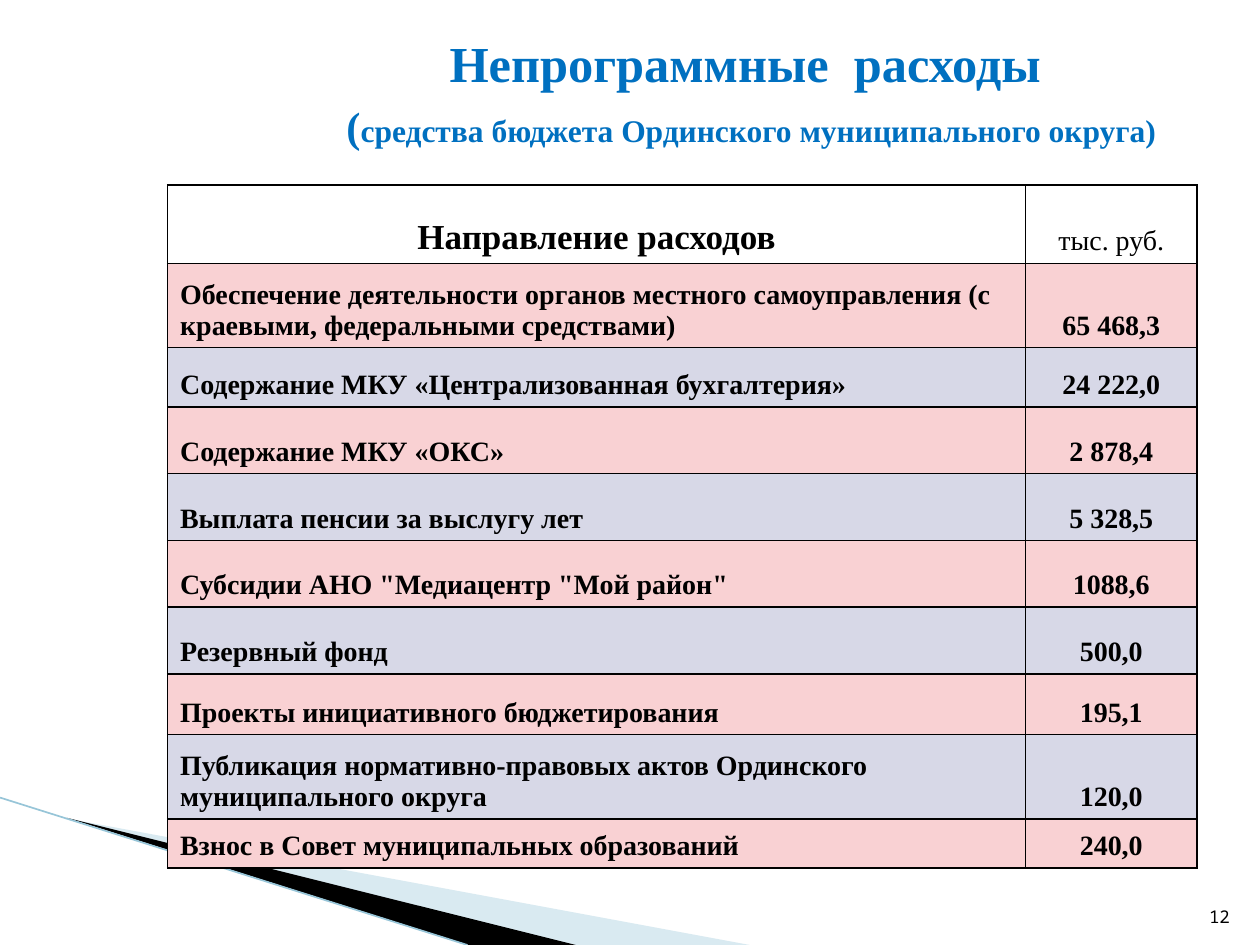
from lxml import etree
from pptx import Presentation
from pptx.dml.color import RGBColor
from pptx.enum.shapes import MSO_CONNECTOR
from pptx.enum.text import MSO_ANCHOR, PP_ALIGN
from pptx.oxml.ns import qn
from pptx.util import Inches, Pt

STRAIGHT = MSO_CONNECTOR.STRAIGHT
MIDDLE, BOTTOM = MSO_ANCHOR.MIDDLE, MSO_ANCHOR.BOTTOM
LEFT, CENTER, RIGHT = PP_ALIGN.LEFT, PP_ALIGN.CENTER, PP_ALIGN.RIGHT
SERIF = "Times New Roman"
BLACK, WHITE, BLUE = "000000", "FFFFFF", "0070C0"
PINK, LAVENDER = "F9D1D3", "D7D8E7"

COLUMN_WIDTHS = (6.81, 1.36)
ROW_HEIGHTS = (0.62, 0.67, 0.47, 0.53, 0.53, 0.53, 0.53, 0.48, 0.67, 0.39)
HEADINGS = (("Направление расходов", 20, True), ("тыс. руб.", 16, False))
EXPENSES = (
    ("Обеспечение деятельности органов местного самоуправления "
     "(с краевыми, федеральными средствами)", "65 468,3"),
    ("Содержание МКУ «Централизованная бухгалтерия»", "24 222,0"),
    ("Содержание МКУ «ОКС»", "2 878,4"),
    ("Выплата пенсии за выслугу лет", "5 328,5"),
    ('Субсидии АНО "Медиацентр "Мой район"', "1088,6"),
    ("Резервный фонд", "500,0"),
    ("Проекты инициативного бюджетирования", "195,1"),
    ("Публикация нормативно-правовых актов Ординского муниципального округа", "120,0"),
    ("Взнос в Совет муниципальных образований", "240,0"),
)


def rgb(color):
    """Turn a hex string into a colour."""
    return RGBColor.from_string(color)


def paint(fill, color):
    """Fill with a solid colour."""
    fill.solid()
    fill.fore_color.rgb = rgb(color)


def style(font, size, color=BLACK, bold=False, name=SERIF):
    """Set the look of a font."""
    font.name, font.size, font.bold = name, Pt(size), bold
    font.color.rgb = rgb(color)


def add_wedge(slide, points, color, opacity=100):
    """Draw a filled corner wedge through points in inches."""
    corners = [(Inches(x), Inches(y)) for x, y in points]
    builder = slide.shapes.build_freeform(*corners[0])
    builder.add_line_segments(corners[1:], close=True)
    wedge = builder.convert_to_shape()
    wedge.shadow.inherit = False
    paint(wedge.fill, color)
    wedge.line.fill.background()
    if opacity < 100:
        tint = wedge.fill._xPr.find(qn("a:solidFill"))[0]
        etree.SubElement(tint, qn("a:alpha"), val=str(opacity * 1000))


def add_edge(slide, start, end, color, width):
    """Draw the thin line along the corner wedges."""
    edge = slide.shapes.add_connector(STRAIGHT, *map(Inches, start + end))
    edge.line.color.rgb = rgb(color)
    edge.line.width = Pt(width)
    etree.SubElement(edge._element.spPr, qn("a:effectLst"))


def add_text(slide, box, anchor, align):
    """Add a wrapped text box and return it with its paragraph."""
    holder = slide.shapes.add_textbox(*map(Inches, box))
    frame = holder.text_frame
    frame.word_wrap = True
    frame.vertical_anchor = anchor
    paragraph = frame.paragraphs[0]
    paragraph.alignment = align
    return holder, paragraph


def add_title(slide):
    """Add the two-line heading."""
    title, paragraph = add_text(slide, (2.33, 0.3, 7.17, 0.87), MIDDLE, CENTER)
    paint(title.fill, WHITE)
    style(paragraph.font, 28.8, BLUE, True)
    paragraph.add_run().text = "Непрограммные  расходы"
    paragraph.add_line_break()
    for text, size in ((" ", 28.8), ("(", 24.3),
                       ("средства бюджета Ординского муниципального округа)", 18)):
        run = paragraph.add_run()
        run.text = text
        run.font.size = Pt(size)


def add_page_number(slide, number):
    """Add the page number in the lower right corner."""
    _, paragraph = add_text(slide, (9.46, 7.01, 0.4, 0.4), BOTTOM, RIGHT)
    paragraph.text = number
    style(paragraph.font, 10, name="Noto Sans Mono")


def add_borders(cell):
    """Outline a cell with thin black lines."""
    properties = cell._tc.get_or_add_tcPr()
    for position, side in enumerate(("lnL", "lnR", "lnT", "lnB")):
        line = etree.Element(qn("a:" + side), w=str(Pt(1)))
        solid = etree.SubElement(line, qn("a:solidFill"))
        etree.SubElement(solid, qn("a:srgbClr"), val=BLACK)
        properties.insert(position, line)


def fill_cell(cell, text, align, color, size=16, bold=True):
    """Write and format one table cell."""
    cell.vertical_anchor = BOTTOM
    paint(cell.fill, color)
    add_borders(cell)
    paragraph = cell.text_frame.paragraphs[0]
    paragraph.text = text
    paragraph.alignment = align
    style(paragraph.font, size, bold=bold)


def add_expense_table(slide):
    """Add the table of expenses with alternating row colours."""
    box = (1.33, 1.47, sum(COLUMN_WIDTHS), sum(ROW_HEIGHTS))
    table = slide.shapes.add_table(
        len(ROW_HEIGHTS), len(COLUMN_WIDTHS), *map(Inches, box)).table
    for column, width in zip(table.columns, COLUMN_WIDTHS):
        column.width = Inches(width)
    for row, height in zip(table.rows, ROW_HEIGHTS):
        row.height = Inches(height)
    for column, (text, size, bold) in enumerate(HEADINGS):
        fill_cell(table.cell(0, column), text, CENTER, WHITE, size, bold)
    for row, (purpose, amount) in enumerate(EXPENSES, 1):
        color = PINK if row % 2 else LAVENDER
        fill_cell(table.cell(row, 0), purpose, LEFT, color)
        fill_cell(table.cell(row, 1), amount, CENTER, color)


def main():
    """Build the slide and save it."""
    deck = Presentation()
    deck.slide_width, deck.slide_height = Inches(10), Inches(7.5)
    slide = deck.slides.add_slide(deck.slide_layouts[6])
    add_wedge(slide, ((0.55, 6.5), (5.95, 7.5), (4.56, 7.5)), "A0CBDC", 40)
    add_wedge(slide, ((0.53, 6.49), (4.57, 7.5), (3.72, 7.5)), BLACK)
    add_edge(slide, (0, 6.33), (3.71, 7.5), "97C5D8", 0.95)
    add_page_number(slide, "12")
    add_title(slide)
    add_expense_table(slide)
    deck.save("out.pptx")


if __name__ == "__main__":
    main()
